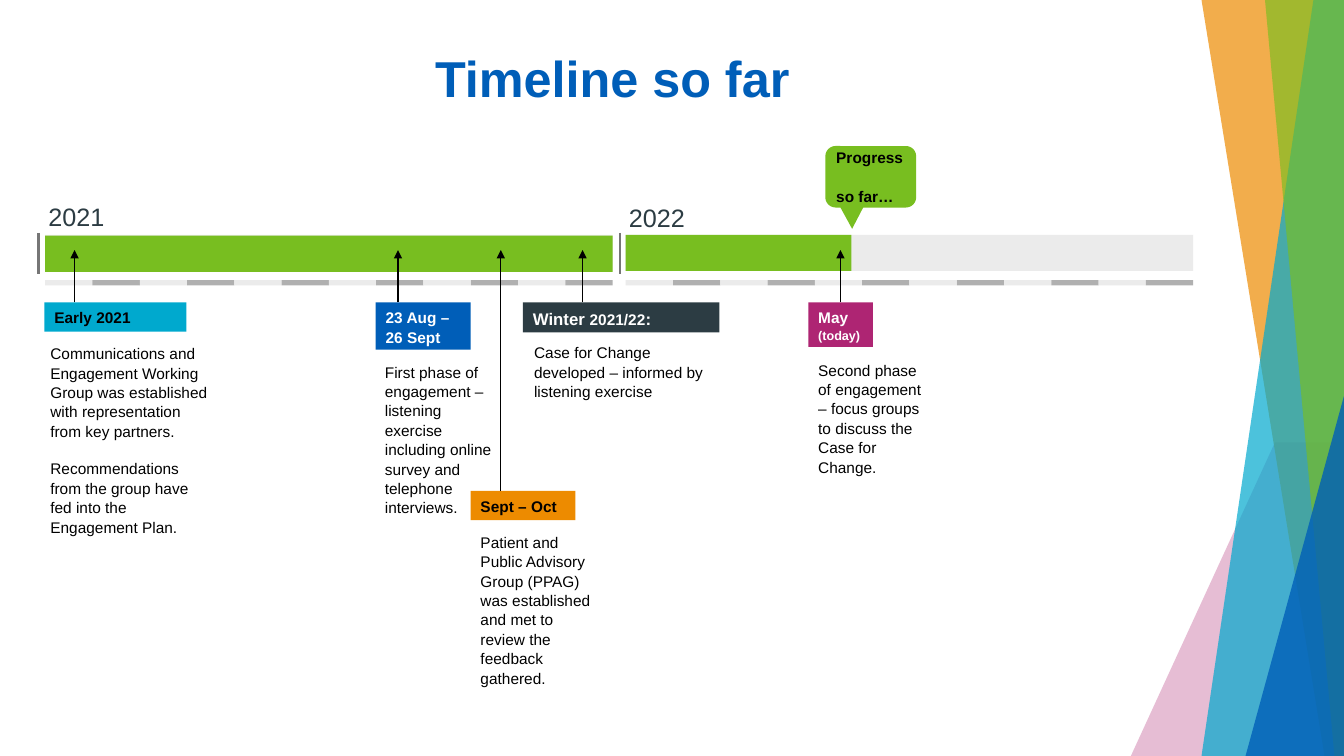
from copy import deepcopy
from dataclasses import dataclass

from pptx import Presentation
from pptx.dml.color import RGBColor
from pptx.enum.shapes import MSO_CONNECTOR, MSO_SHAPE
from pptx.enum.text import MSO_ANCHOR, MSO_AUTO_SIZE, PP_ALIGN
from pptx.oxml.ns import qn
from pptx.oxml.xmlchemy import OxmlElement
from pptx.util import Cm, Pt


@dataclass(frozen=True)
class Theme:
    font: str = "Arial"
    blue: str = "005EB8"
    cyan: str = "00A9CE"
    green: str = "78BE20"
    orange: str = "ED8B00"
    magenta: str = "AE2573"
    slate: str = "2C3C43"
    track: str = "EBEBEB"
    dash: str = "B0B0B0"
    tick: str = "767676"
    black: str = "000000"
    white: str = "FFFFFF"
    title: int = 36
    year: int = 18
    large: int = 12
    body: int = 11
    small: int = 9


def paint(shape, color, opacity=100):
    shape.shadow.inherit = False
    shape.line.fill.background()
    shape.fill.solid()
    shape.fill.fore_color.rgb = RGBColor.from_string(color)
    if opacity < 100:
        alpha = OxmlElement("a:alpha")
        alpha.set("val", str(opacity * 1000))
        shape.fill._xPr.find(qn("a:solidFill"))[0].append(alpha)
    return shape


def write(shape, text, size, color, bold=False, anchor=MSO_ANCHOR.TOP, align=PP_ALIGN.LEFT):
    frame = shape.text_frame
    frame.text = text
    frame.word_wrap = True
    frame.auto_size = MSO_AUTO_SIZE.NONE
    frame.vertical_anchor = anchor
    for index, para in enumerate(frame.paragraphs):
        para.alignment = align
        para.line_spacing = 1.05
        para.space_before = Pt(13 if index else 0)
        for span in para.runs:
            span.font.name = theme.font
            span.font.size = Pt(size)
            span.font.bold = bold
            span.font.color.rgb = RGBColor.from_string(color)
        for line_break in para._p.findall(qn("a:br")):
            line_break.append(deepcopy(para.runs[0]._r.rPr))
    return frame


theme = Theme()
deck = Presentation()
deck.slide_width, deck.slide_height = Cm(33.87), Cm(19.05)
page = deck.slides.add_slide(deck.slide_layouts[5])
shapes = page.shapes

for top_x, top_y, bottom_x, color, opacity in [
    (32.13, 11.15, 28.5, theme.magenta, 30),
    (30.28, 0, 33.38, theme.orange, 70),
    (33.1, 0, 30.28, theme.cyan, 70),
    (31.88, 0, 33.63, theme.green, 65),
]:
    outline = shapes.build_freeform(Cm(top_x), Cm(top_y))
    outline.add_line_segments(
        [(Cm(33.87), Cm(top_y)), (Cm(33.87), Cm(19.05)), (Cm(bottom_x), Cm(19.05))]
    )
    paint(outline.convert_to_shape(), color, opacity)
wedge = shapes.add_shape(MSO_SHAPE.ISOSCELES_TRIANGLE, Cm(31.39), Cm(9.98), Cm(2.48), Cm(9.07))
wedge.adjustments[0] = 1
paint(wedge, theme.blue, 80)

title = shapes.title
title.left, title.top, title.width, title.height = Cm(1.88), Cm(0.89), Cm(27.46), Cm(2.06)
write(title, "Timeline so far ", theme.title, theme.blue, True, MSO_ANCHOR.MIDDLE, PP_ALIGN.CENTER)

bar_width, dash_count = 14.3, 12
dash_width = bar_width / dash_count
lines = []
for year, year_left, year_top, bar_left, done_top, done_width, tick_x in [
    ("2021", 0.97, 4.9, 1.14, 5.94, bar_width, 0.97),
    ("2022", 15.6, 4.93, 15.77, 5.92, 5.69, 15.62),
]:
    box = shapes.add_textbox(Cm(year_left), Cm(year_top), Cm(2.29), Cm(1.02))
    write(box, year, theme.year, theme.slate)
    for top, width, color in [(5.92, bar_width, theme.track), (done_top, done_width, theme.green)]:
        bar = shapes.add_shape(MSO_SHAPE.RECTANGLE, Cm(bar_left), Cm(top), Cm(width), Cm(0.91))
        paint(bar, color)
    for month in range(dash_count):
        dash = shapes.add_shape(
            MSO_SHAPE.RECTANGLE,
            Cm(bar_left + month * dash_width), Cm(7.06), Cm(dash_width), Cm(0.13),
        )
        paint(dash, theme.dash if month % 2 else theme.track)
    lines.append((tick_x, 5.87, 6.91, theme.tick, 1.5, False))

callout = shapes.add_shape(
    MSO_SHAPE.ROUNDED_RECTANGULAR_CALLOUT, Cm(20.8), Cm(3.68), Cm(2.29), Cm(1.55)
)
for index, value in enumerate([-0.205, 0.846, 0.167]):
    callout.adjustments[index] = value
paint(callout, theme.green)
frame = write(callout, "Progress \vso far…", theme.body, theme.black, True, MSO_ANCHOR.MIDDLE)
frame.margin_left = frame.margin_right = Cm(0.2)
frame.margin_top = frame.margin_bottom = 0

events = [
    ("Early 2021", theme.cyan, theme.black, (1.12, 7.62, 3.58, 0.74), 1.88,
     "Communications and Engagement Working Group was established with representation "
     "from key partners.\nRecommendations from the group have fed into the Engagement Plan.",
     (1.02, 8.53, 4.47, 4.95)),
    ("23 Aug – 26 Sept", theme.blue, theme.white, (9.47, 7.62, 2.39, 1.19), 10.03,
     "First phase of engagement – listening exercise including online survey and "
     "telephone interviews.",
     (9.45, 8.99, 3.28, 4.01)),
    ("Winter ", theme.slate, theme.white, (13.18, 7.62, 4.95, 0.76), 14.68,
     "Case for Change developed – informed by listening exercise",
     (13.21, 8.51, 4.95, 2.13)),
    ("May \v(today)", theme.magenta, theme.white, (20.37, 7.62, 1.63, 1.12), 21.18,
     "Second phase of engagement – focus groups to discuss the Case for Change.",
     (20.37, 8.94, 3.28, 3.07)),
    ("Sept – Oct", theme.orange, theme.black, (11.86, 12.37, 2.64, 0.74), 12.62,
     "Patient and Public Advisory Group (PPAG) was established and met to review "
     "the feedback gathered.",
     (11.86, 13.28, 3.28, 4.01)),
]
labels = {}
for name, fill, ink, label_area, arrow_x, story, story_area in events:
    label = shapes.add_shape(MSO_SHAPE.RECTANGLE, *map(Cm, label_area))
    paint(label, fill)
    labels[name] = write(label, name, theme.body, ink, True).paragraphs[0]
    write(shapes.add_textbox(*map(Cm, story_area)), story, theme.body, theme.black)
    lines.append((arrow_x, label_area[1], 6.3, theme.black, 1, True))

labels["May \v(today)"].runs[1].font.size = Pt(theme.small)
winter = labels["Winter "]
winter.runs[0].font.size = Pt(theme.large)
for text, size in [("2021/22", theme.body), (":", theme.large)]:
    span = winter.add_run()
    span.text = text
    span.font.name = theme.font
    span.font.size = Pt(size)
    span.font.bold = True
    span.font.color.rgb = RGBColor.from_string(theme.white)

for x, start, end, color, weight, arrow in lines:
    line = shapes.add_connector(MSO_CONNECTOR.STRAIGHT, Cm(x), Cm(start), Cm(x), Cm(end))
    line.line.color.rgb = RGBColor.from_string(color)
    line.line.width = Pt(weight)
    if arrow:
        head = OxmlElement("a:tailEnd")
        head.set("type", "triangle")
        line.line._get_or_add_ln().append(head)
    line._element.spPr.append(OxmlElement("a:effectLst"))

deck.save("out.pptx")
